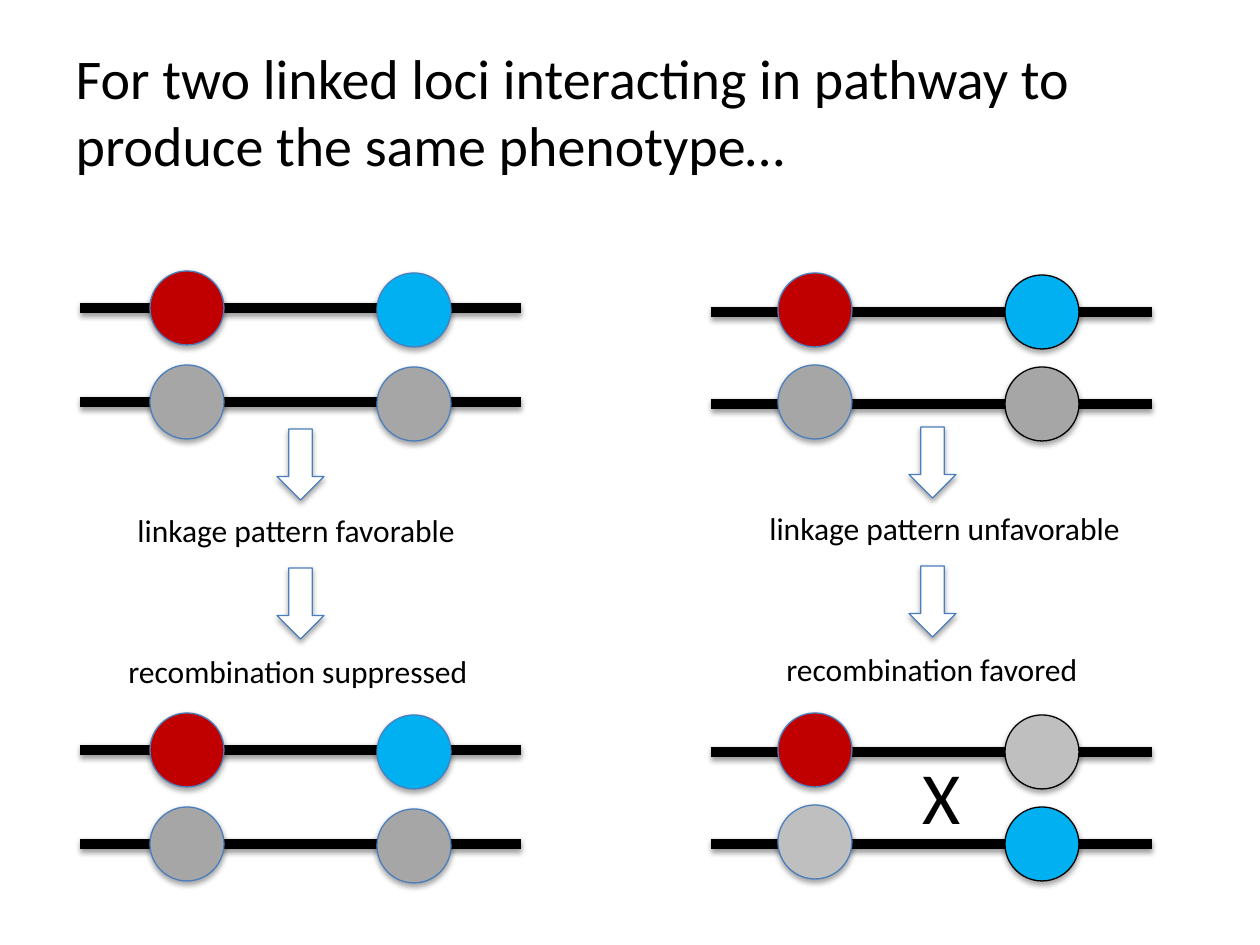
"""Build a slide contrasting favorable and unfavorable linkage of two loci."""
from dataclasses import dataclass

from pptx import Presentation
from pptx.dml.color import RGBColor
from pptx.enum.shapes import MSO_CONNECTOR, MSO_SHAPE
from pptx.enum.text import MSO_ANCHOR, MSO_AUTO_SIZE, PP_ALIGN
from pptx.slide import Slide
from pptx.text.text import TextFrame
from pptx.util import Emu, Pt

EMU_PER_PX = 914400 / 126
CHROMATID_WIDTH = 441
LOCUS_SIZE = 74
SECOND_LOCUS_DROP = 2
ARROW_SIZE = (47, 71)
ARROW_TOPS = (429, 568)
LABEL_TOPS = (505, 646)
LABEL_HEIGHT = 50


@dataclass(frozen=True)
class Theme:
    font: str = "Calibri"
    title_size: int = 32
    label_size: int = 18
    cross_size: int = 42
    thin: float = 0.75
    thick: float = 6
    black: str = "000000"
    white: str = "FFFFFF"
    outline: str = "4B7EBC"
    red: str = "C00000"
    blue: str = "00B0F0"
    gray: str = "A6A6A6"
    pale: str = "BFBFBF"


THEME = Theme()


@dataclass(frozen=True)
class Chromatid:
    y: int
    first: str
    second: str


@dataclass(frozen=True)
class Label:
    text: str
    left: int
    width: int


@dataclass(frozen=True)
class Pathway:
    left: int
    loci: tuple[int, int]
    locus_rise: int
    second_outline: str
    arrow_left: int
    lift: int
    labels: tuple[Label, Label]
    chromatids: tuple[Chromatid, ...]


PATHWAYS = (
    Pathway(
        80, (150, 377), 37, THEME.outline, 277, 0,
        (Label("linkage pattern favorable", 125, 354),
         Label("recombination suppressed", 116, 369)),
        (Chromatid(308, THEME.red, THEME.blue),
         Chromatid(402, THEME.gray, THEME.gray),
         Chromatid(750, THEME.red, THEME.blue),
         Chromatid(844, THEME.gray, THEME.gray)),
    ),
    Pathway(
        711, (778, 1005), 39, THEME.black, 909, 2,
        (Label("linkage pattern unfavorable", 757, 381),
         Label("recombination favored", 774, 320)),
        (Chromatid(312, THEME.red, THEME.blue),
         Chromatid(404, THEME.gray, THEME.gray),
         Chromatid(752, THEME.red, THEME.pale),
         Chromatid(844, THEME.pale, THEME.blue)),
    ),
)


def px(length: int) -> Emu:
    """Turn pixels into EMU."""
    return Emu(round(length * EMU_PER_PX))


def write(frame: TextFrame, text: str, size: int, formats: dict) -> None:
    """Put one left-aligned line of text into a formatted frame."""
    for attribute, value in formats.items():
        setattr(frame, attribute, value)
    paragraph = frame.paragraphs[0]
    paragraph.alignment = PP_ALIGN.LEFT
    run = paragraph.add_run()
    run.text = text
    for attribute, value in {"name": THEME.font, "size": Pt(size)}.items():
        setattr(run.font, attribute, value)
    run.font.color.rgb = RGBColor.from_string(THEME.black)


def draw_title(slide: Slide, text: str) -> None:
    """Place and fill the title placeholder."""
    title = slide.shapes.title
    bounds = {"left": 63, "top": 37, "width": 1131, "height": 149}
    for attribute, value in bounds.items():
        setattr(title, attribute, px(value))
    write(title.text_frame, text, THEME.title_size,
          {"word_wrap": True, "vertical_anchor": MSO_ANCHOR.TOP,
           "auto_size": MSO_AUTO_SIZE.SHAPE_TO_FIT_TEXT})


def draw_label(slide: Slide, label: Label, top: int, height: int, size: int) -> None:
    """Add an unwrapped text box."""
    box = slide.shapes.add_textbox(
        px(label.left), px(top), px(label.width), px(height))
    write(box.text_frame, label.text, size,
          {"word_wrap": False, "auto_size": MSO_AUTO_SIZE.SHAPE_TO_FIT_TEXT})


def draw_shape(slide: Slide, kind: MSO_SHAPE, left: int, top: int,
               size: tuple[int, int], fill: str, outline: str) -> None:
    """Add a filled, outlined shape that keeps the theme's soft shadow."""
    shape = slide.shapes.add_shape(kind, px(left), px(top), *map(px, size))
    shape.fill.solid()
    shape.fill.fore_color.rgb = RGBColor.from_string(fill)
    shape.line.color.rgb = RGBColor.from_string(outline)
    shape.line.width = Pt(THEME.thin)


def draw_chromatid(slide: Slide, pathway: Pathway, chromatid: Chromatid) -> None:
    """Draw one strand with its two loci."""
    strand = slide.shapes.add_connector(
        MSO_CONNECTOR.STRAIGHT, px(pathway.left), px(chromatid.y),
        px(pathway.left + CHROMATID_WIDTH), px(chromatid.y))
    strand.line.color.rgb = RGBColor.from_string(THEME.black)
    strand.line.width = Pt(THEME.thick)
    top = chromatid.y - pathway.locus_rise
    loci = zip(pathway.loci, (top, top + SECOND_LOCUS_DROP),
               (chromatid.first, chromatid.second),
               (THEME.outline, pathway.second_outline))
    for left, locus_top, fill, outline in loci:
        draw_shape(slide, MSO_SHAPE.OVAL, left, locus_top,
                   (LOCUS_SIZE, LOCUS_SIZE), fill, outline)


def draw_pathway(slide: Slide, pathway: Pathway) -> None:
    """Draw one column of strands, arrows and labels."""
    for chromatid in pathway.chromatids:
        draw_chromatid(slide, pathway, chromatid)
    for arrow_top, label_top, label in zip(ARROW_TOPS, LABEL_TOPS, pathway.labels):
        draw_shape(slide, MSO_SHAPE.DOWN_ARROW, pathway.arrow_left,
                   arrow_top - pathway.lift, ARROW_SIZE, THEME.white, THEME.outline)
        draw_label(slide, label, label_top - pathway.lift, LABEL_HEIGHT,
                   THEME.label_size)


def main() -> None:
    """Build and save the presentation."""
    presentation = Presentation()
    presentation.slide_width, presentation.slide_height = px(1260), px(945)
    slide = presentation.slides.add_slide(presentation.slide_layouts[5])
    draw_title(slide, "For two linked loci interacting in pathway to "
                      "produce the same phenotype…")
    for pathway in PATHWAYS:
        draw_pathway(slide, pathway)
    draw_label(slide, Label("X", 910, 64), 745, 102, THEME.cross_size)
    presentation.save("out.pptx")


if __name__ == "__main__":
    main()
